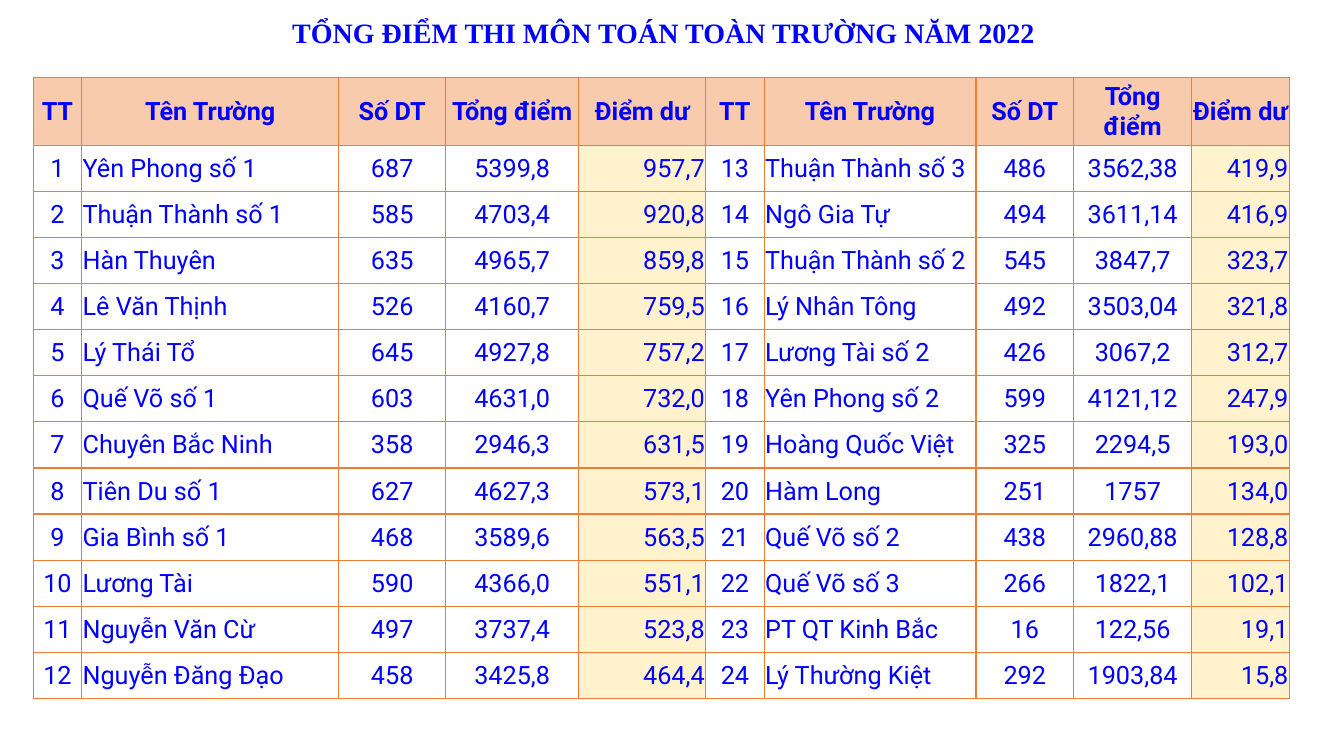
from lxml.etree import SubElement
from pptx import Presentation
from pptx.dml.color import RGBColor
from pptx.enum.text import MSO_ANCHOR, PP_ALIGN
from pptx.oxml import parse_xml
from pptx.oxml.ns import nsdecls, qn
from pptx.util import Inches, Pt

BLUE = RGBColor(0x00, 0x00, 0xFF)
ORANGE = RGBColor(0xED, 0x7D, 0x31)
PEACH = RGBColor(0xF8, 0xCB, 0xAD)
CREAM = RGBColor(0xFF, 0xF2, 0xCC)

TITLE = "TỔNG ĐIỂM THI MÔN TOÁN TOÀN TRƯỜNG NĂM 2022 "
HEADINGS = ["TT", "Tên Trường", "Số DT", "Tổng điểm", "Điểm dư"]
ALIGNMENTS = [PP_ALIGN.CENTER, PP_ALIGN.LEFT, PP_ALIGN.CENTER,
              PP_ALIGN.CENTER, PP_ALIGN.RIGHT]
SURPLUS_COLUMN = HEADINGS.index("Điểm dư")
COLUMN_WIDTHS = [0.48, 2.55, 1.06, 1.32, 1.26, 0.58, 2.1, 0.97, 1.17, 0.97]
HEADER_HEIGHT = 0.67
TABLE_HEIGHT = 6.16

# School, candidates, total score, surplus score, in ranking order
SCHOOLS = [
    ("Yên Phong số 1", "687", "5399,8", "957,7"),
    ("Thuận Thành số 1", "585", "4703,4", "920,8"),
    ("Hàn Thuyên", "635", "4965,7", "859,8"),
    ("Lê Văn Thịnh", "526", "4160,7", "759,5"),
    ("Lý Thái Tổ", "645", "4927,8", "757,2"),
    ("Quế Võ số 1", "603", "4631,0", "732,0"),
    ("Chuyên Bắc Ninh", "358", "2946,3", "631,5"),
    ("Tiên Du số 1", "627", "4627,3", "573,1"),
    ("Gia Bình số 1", "468", "3589,6", "563,5"),
    ("Lương Tài", "590", "4366,0", "551,1"),
    ("Nguyễn Văn Cừ", "497", "3737,4", "523,8"),
    ("Nguyễn Đăng Đạo", "458", "3425,8", "464,4"),
    ("Thuận Thành số 3", "486", "3562,38", "419,9"),
    ("Ngô Gia Tự", "494", "3611,14", "416,9"),
    ("Thuận Thành số 2", "545", "3847,7", "323,7"),
    ("Lý Nhân Tông", "492", "3503,04", "321,8"),
    ("Lương Tài số 2", "426", "3067,2", "312,7"),
    ("Yên Phong số 2", "599", "4121,12", "247,9"),
    ("Hoàng Quốc Việt", "325", "2294,5", "193,0"),
    ("Hàm Long", "251", "1757", "134,0"),
    ("Quế Võ số 2", "438", "2960,88", "128,8"),
    ("Quế Võ số 3", "266", "1822,1", "102,1"),
    ("PT QT Kinh Bắc", "16", "122,56", "19,1"),
    ("Lý Thường Kiệt", "292", "1903,84", "15,8"),
]


class ScoreSlide:
    title_font = "Times New Roman"
    table_font = "Roboto"

    def __init__(self, slide):
        self.slide = slide

    def add_run(self, paragraph, text, font_name, size, bold):
        run = paragraph.add_run()
        run.text = text
        run.font.name = font_name
        run.font.size = Pt(size)
        run.font.bold = bold
        run.font.color.rgb = BLUE

    def add_title(self, text, left, top, width, height):
        title = self.slide.shapes.add_textbox(
            Inches(left), Inches(top), Inches(width), Inches(height))
        frame = title.text_frame
        frame.word_wrap = True
        frame.vertical_anchor = MSO_ANCHOR.MIDDLE
        paragraph = frame.paragraphs[0]
        paragraph.alignment = PP_ALIGN.CENTER
        paragraph.line_spacing = 0.9
        self.add_run(paragraph, text, self.title_font, 20, True)

    def add_table(self, rows, left, top, widths, height, header_height):
        """Add a table whose body rows share the height below the header."""
        table = self.slide.shapes.add_table(
            len(rows), len(widths), Inches(left), Inches(top),
            Inches(sum(widths)), Inches(height)).table
        table.first_row = False
        table.horz_banding = False
        for column, width in zip(table.columns, widths):
            column.width = Inches(width)
        body_height = (height - header_height) / (len(rows) - 1)
        for row_index, values in enumerate(rows):
            is_header = row_index == 0
            table.rows[row_index].height = Inches(
                header_height if is_header else body_height)
            for column_index, value in enumerate(values):
                field = column_index % len(HEADINGS)
                if is_header:
                    alignment, fill = PP_ALIGN.CENTER, PEACH
                else:
                    alignment = ALIGNMENTS[field]
                    fill = CREAM if field == SURPLUS_COLUMN else None
                self.fill_cell(table.cell(row_index, column_index), value,
                               alignment, fill, is_header)

    def fill_cell(self, cell, text, alignment, fill, bold):
        cell.margin_left = cell.margin_right = cell.margin_top = Inches(0.01)
        cell.margin_bottom = Inches(0)
        cell.vertical_anchor = MSO_ANCHOR.MIDDLE
        if fill is None:
            cell.fill.background()
        else:
            cell.fill.solid()
            cell.fill.fore_color.rgb = fill
        paragraph = cell.text_frame.paragraphs[0]
        paragraph.alignment = alignment
        self.add_run(paragraph, text, self.table_font, 18, bold)
        self.add_borders(cell)

    def add_borders(self, cell):
        properties = cell._tc.get_or_add_tcPr()
        for position, side in enumerate(("lnL", "lnR", "lnT", "lnB")):
            border = parse_xml(f'<a:{side} {nsdecls("a")} w="{Pt(1)}"/>')
            line_fill = SubElement(border, qn("a:solidFill"))
            SubElement(line_fill, qn("a:srgbClr"), val=str(ORANGE))
            properties.insert(position, border)


def build_rows():
    """Place the second half of the ranking beside the first."""
    ranked = [(str(rank), *school) for rank, school in enumerate(SCHOOLS, 1)]
    half = len(ranked) // 2
    pairs = zip(ranked[:half], ranked[half:])
    return [HEADINGS * 2] + [first + second for first, second in pairs]


def main():
    presentation = Presentation()
    presentation.slide_width = Inches(13.33)
    presentation.slide_height = Inches(7.5)
    slide = presentation.slides.add_slide(presentation.slide_layouts[6])
    scores = ScoreSlide(slide)
    scores.add_title(TITLE, 0, 0.12, 13.23, 0.45)
    scores.add_table(build_rows(), 0.33, 0.77, COLUMN_WIDTHS, TABLE_HEIGHT,
                     HEADER_HEIGHT)
    presentation.save("out.pptx")


if __name__ == "__main__":
    main()
